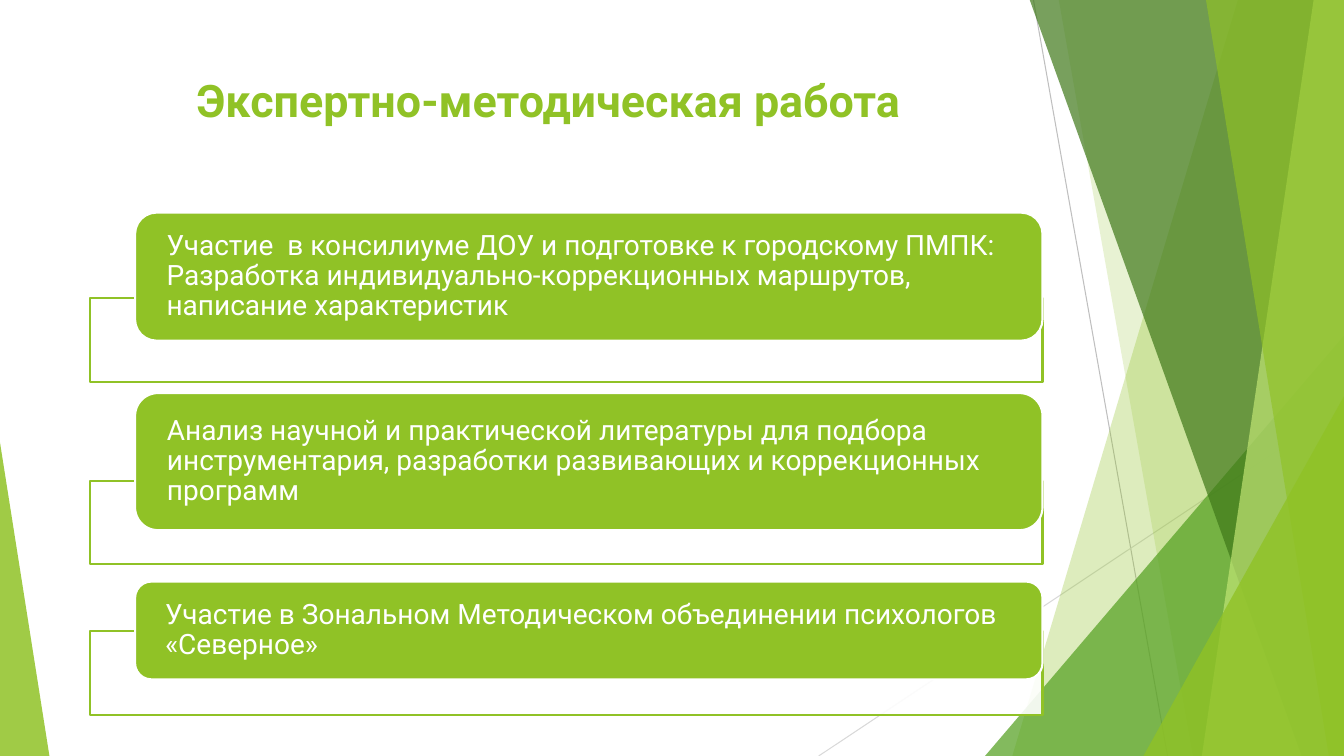
from pptx import Presentation
from pptx.dml.color import RGBColor
from pptx.enum.shapes import MSO_CONNECTOR as LINK, MSO_SHAPE as KIND
from pptx.enum.text import MSO_ANCHOR as ANCHOR, PP_ALIGN as ALIGN
from pptx.oxml.ns import qn
from pptx.util import Inches, Pt
from lxml.etree import SubElement

WHITE = RGBColor(0xFF, 0xFF, 0xFF)
LIME = RGBColor(0x90, 0xC2, 0x26)
GREEN = RGBColor(0x54, 0xA0, 0x21)
DARK = RGBColor(0x3F, 0x78, 0x19)
PALE = RGBColor(0xC0, 0xE4, 0x74)
GREY = RGBColor(0xBF, 0xBF, 0xBF)
SILVER = RGBColor(0xD9, 0xD9, 0xD9)

WIDE, HIGH, TOP = 13.33, 7.5, -0.01
FONT = "Roboto"
TITLE = "Экспертно-методическая работа"
CARDS = [
    ("Участие  в консилиуме ДОУ и подготовке к городскому ПМПК: "
     "Разработка индивидуально-коррекционных маршрутов, "
     "написание характеристик", 2.11, 1.27, 2.96),
    ("Анализ научной и практической литературы для подбора "
     "инструментария, разработки развивающих и коррекционных "
     "программ", 3.9, 1.36, 4.77),
    ("Участие в Зональном Методическом объединении психологов "
     "«Северное»", 5.77, 0.97, 6.26),
]
RAYS = [
    ((10.25, 0), (11.58, HIGH), GREY),
    ((WIDE, 4.03), (8.12, HIGH), SILVER),
]
BAND, PEAK = "band", "peak"
DECOR = [
    (BAND, (12.28, 10.04), LIME, 30),
    (BAND, (10.5, 11.83), LIME, 20),
    (PEAK, (9.77, 3.33, 3.56, 1), GREEN, 72),
    (BAND, (10.21, 12.91), DARK, 70),
    (BAND, (13.03, 11.92), PALE, 70),
    (BAND, (11.96, 13.18), LIME, 65),
    (PEAK, (11.34, 3.93, 1.99, 1), LIME, 80),
    (PEAK, (0, 4.39, 0.49, 0), LIME, 85),
]

deck = Presentation()
deck.slide_width, deck.slide_height = Inches(WIDE), Inches(HIGH)
slide = deck.slides.add_slide(deck.slide_layouts[6])
shapes = slide.shapes


def paint(shape, color, alpha=100, edge=None):
    shape.shadow.inherit = False
    shape.fill.solid()
    shape.fill.fore_color.rgb = color
    if alpha < 100:
        tint = shape.fill._xPr.find(qn("a:solidFill"))[0]
        SubElement(tint, qn("a:alpha")).set("val", str(alpha * 1000))
    if edge is None:
        shape.line.fill.background()
    else:
        shape.line.color.rgb = edge
        shape.line.width = Pt(1.5)


def block(kind, left, top, width, height):
    return shapes.add_shape(kind, Inches(left), Inches(top),
                            Inches(width), Inches(height))


def write(shape, text, size, color, bold=False, align=ALIGN.LEFT,
          anchor=ANCHOR.MIDDLE, side=0.25, edge=0, space=0.9):
    frame = shape.text_frame
    frame.word_wrap = True
    frame.vertical_anchor = anchor
    frame.margin_left = frame.margin_right = Inches(side)
    frame.margin_top = frame.margin_bottom = Inches(edge)
    para = frame.paragraphs[0]
    para.alignment = align
    para.line_spacing = space
    run = para.add_run()
    run.text = text
    run.font.name, run.font.size = FONT, Pt(size)
    run.font.bold, run.font.color.rgb = bold, color


def band(upper, lower):
    dots = [(Inches(x), Inches(y)) for x, y in
            [(upper, TOP), (WIDE, TOP), (WIDE, HIGH), (lower, HIGH)]]
    pen = shapes.build_freeform(*dots[0])
    pen.add_line_segments(dots[1:], close=True)
    return pen.convert_to_shape()


def peak(left, top, width, tip):
    shape = block(KIND.ISOSCELES_TRIANGLE, left, top, width, HIGH - top)
    shape.adjustments[0] = tip
    return shape


for start, end, color in RAYS:
    ray = shapes.add_connector(LINK.STRAIGHT,
                               *[Inches(v) for v in start + end])
    ray.line.color.rgb = color
    ray.line.width = Pt(0.75)
    SubElement(ray._element.spPr, qn("a:effectLst"))

for kind, place, color, alpha in DECOR:
    paint((band if kind == BAND else peak)(*place), color, alpha)

for text, top, height, low in CARDS:
    paint(block(KIND.RECTANGLE, 0.89, low, 9.45, 0.83), WHITE, 90, LIME)
    card = block(KIND.ROUNDED_RECTANGLE, 1.34, top, 9, height)
    paint(card, LIME, edge=WHITE)
    write(card, text, 20, WHITE)

title = shapes.add_textbox(Inches(0.74), Inches(0.67),
                           Inches(9.4), Inches(1.44))
write(title, TITLE, 32, LIME, bold=True, align=ALIGN.CENTER,
      anchor=ANCHOR.TOP, side=0.1, edge=0.05, space=1.0)

deck.save("out.pptx")
